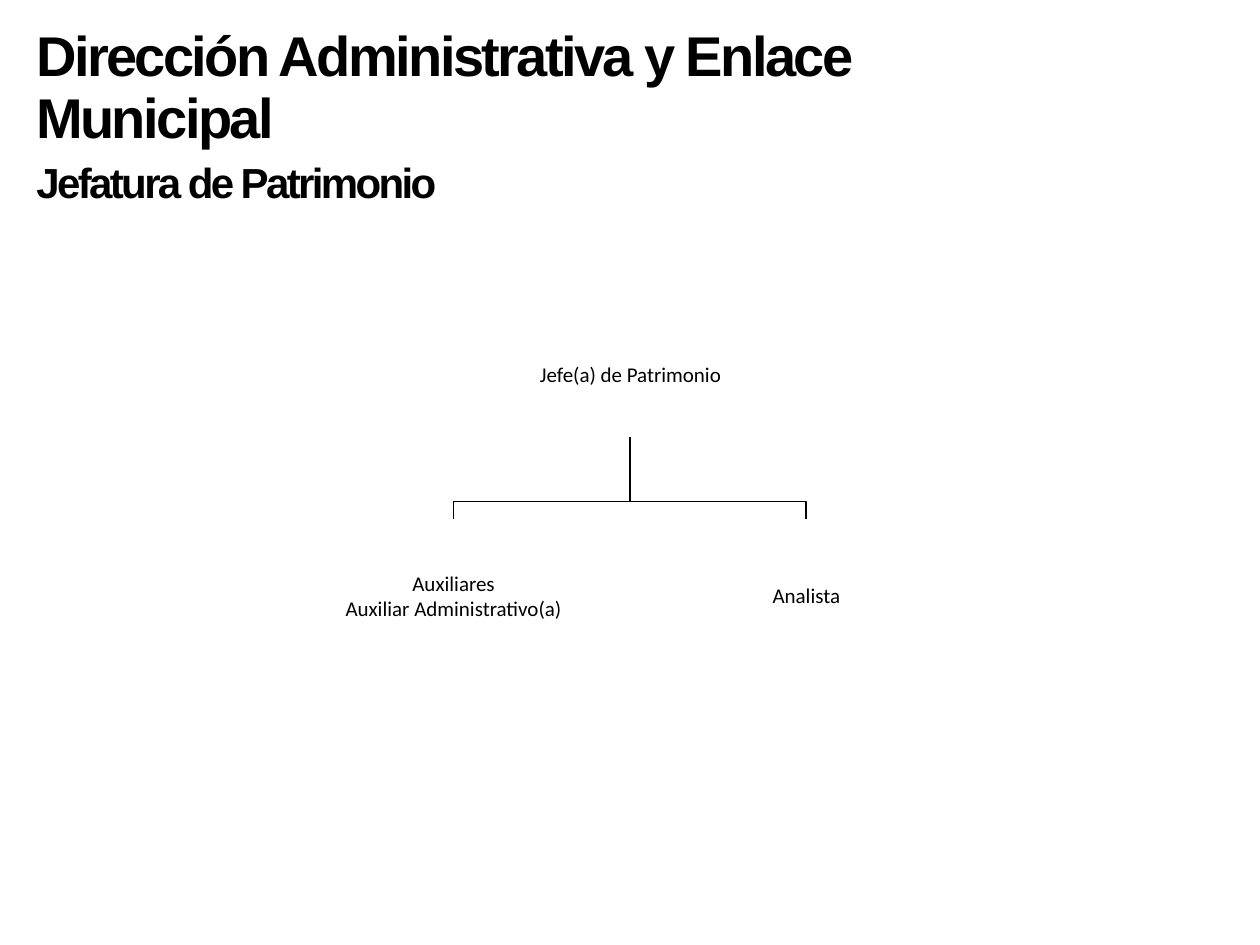
from pptx import Presentation
from pptx.dml.color import RGBColor
from pptx.enum.text import MSO_ANCHOR as Anchor, PP_ALIGN as Align
from pptx.util import Inches, Pt

BLACK = RGBColor(0, 0, 0)
WHITE = RGBColor(255, 255, 255)

# Organisation chart geometry, in inches
BOX_WIDTH, BOX_HEIGHT = 2.52, 1.21
CHIEF_X, CHIEF_BOTTOM = 5, 3.47
BUS_Y, STAFF_TOP = 3.98, 4.12
BRANCH_OFFSET = 1.4
STAFF = [["Auxiliares", "Auxiliar Administrativo(a)"], ["Analista"]]


def add_text(slide, lines, left, top, width, height, *, sizes=(12,),
             font="Calibri", bold=False, align=Align.CENTER,
             anchor=Anchor.MIDDLE, inset=0.01, tracking=None,
             spacing=1.0, gap=0, fill=None):
    box = slide.shapes.add_textbox(
        Inches(left), Inches(top), Inches(width), Inches(height))
    if fill is not None:
        box.fill.solid()
        box.fill.fore_color.rgb = fill
    frame = box.text_frame
    frame.word_wrap = True
    frame.vertical_anchor = anchor
    if inset is not None:
        frame.margin_left = frame.margin_right = Inches(inset)
        frame.margin_top = frame.margin_bottom = Inches(inset)
    for i, line in enumerate(lines):
        paragraph = frame.paragraphs[0] if i == 0 else frame.add_paragraph()
        paragraph.alignment = align
        paragraph.line_spacing = spacing if i == 0 else 1.0
        if i:
            paragraph.space_before = Pt(gap)
        run = paragraph.add_run()
        run.text = line
        run.font.name = font
        run.font.size = Pt(sizes[min(i, len(sizes) - 1)])
        run.font.bold = bold
        run.font.color.rgb = BLACK
        if tracking is not None:
            run.font._element.set("spc", str(int(tracking * 100)))
    return box


def add_branch(slide, staff_x):
    """Elbow line from the chief down to one staff position."""
    builder = slide.shapes.build_freeform(
        Inches(CHIEF_X), Inches(CHIEF_BOTTOM))
    corners = [(CHIEF_X, BUS_Y), (staff_x, BUS_Y), (staff_x, STAFF_TOP)]
    builder.add_line_segments(
        [(Inches(x), Inches(y)) for x, y in corners], close=False)
    branch = builder.convert_to_shape()
    branch.shadow.inherit = False
    branch.fill.background()
    branch.line.color.rgb = BLACK
    branch.line.width = Pt(1)


def main():
    prs = Presentation()
    prs.slide_width, prs.slide_height = Inches(10), Inches(7.5)
    slide = prs.slides.add_slide(prs.slide_layouts[6])

    # Heading
    add_text(slide, ["Dirección Administrativa y Enlace Municipal",
                     "Jefatura de Patrimonio"],
             0.19, 0.16, 7.46, 1.47, sizes=(32, 24), font="Arial", bold=True,
             align=Align.LEFT, anchor=Anchor.TOP, inset=None,
             tracking=-1.5, spacing=0.93, gap=3)

    # Branches, drawn behind the positions
    staff_centres = [CHIEF_X - BRANCH_OFFSET, CHIEF_X + BRANCH_OFFSET]
    for staff_x in reversed(staff_centres):
        add_branch(slide, staff_x)

    # Positions
    add_text(slide, ["Jefe(a) de Patrimonio"], 3.72, 2.46, 2.57, 1.02)
    for staff_x, titles in zip(staff_centres, STAFF):
        add_text(slide, titles, staff_x - BOX_WIDTH / 2, STAFF_TOP,
                 BOX_WIDTH, BOX_HEIGHT, fill=WHITE)

    prs.save("out.pptx")


if __name__ == "__main__":
    main()
